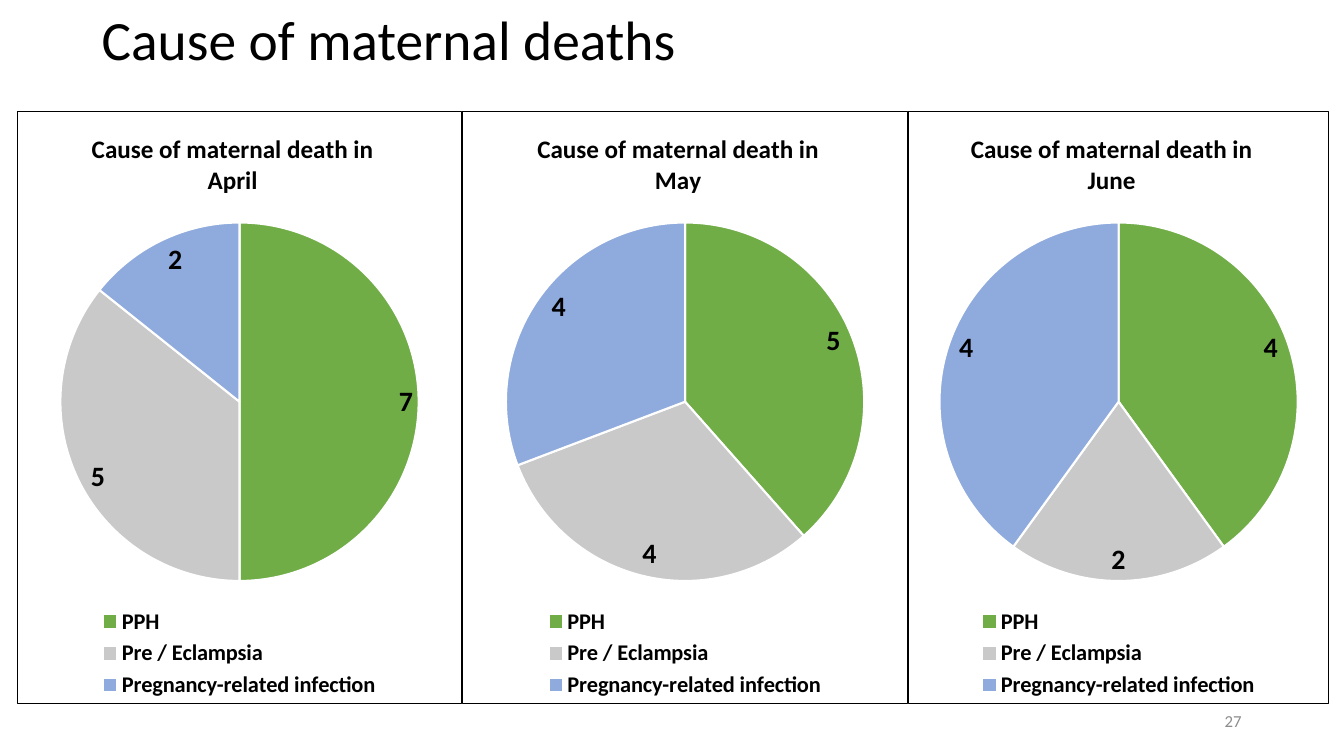
from lxml import etree
from pptx import Presentation, util as u
from pptx.chart.data import CategoryChartData
from pptx.dml.color import RGBColor
from pptx.enum import chart as ch, text
from pptx.oxml import parse_xml
from pptx.oxml.ns import nsdecls, qn

# Content
HEADING = "Cause of maternal deaths"
PAGE_NUMBER = "27"
CAUSES = ("PPH", "Pre / Eclampsia", "Pregnancy-related infection")
MONTHS = [  # month, deaths by cause, panel width
    ("April", (7, 5, 2), 318.25),
    ("May", (5, 4, 4), 318.25),
    ("June", (4, 2, 4), 301),
]

# Theme
THEME = {
    "font": "Calibri",
    "ink": "000000",
    "muted": "8C8C8C",
    "gap": "FFFFFF",
    "causes": ("70AD47", "C9C9C9", "8FAADC"),
    "heading": 39.6, "number": 12, "base": 10,
    "month": 18, "legend": 16, "value": 20,
}

# Geometry
SLIDE_W, SLIDE_H = 960, 540
PANELS_LEFT, PANELS_TOP, PANEL_H = 12, 79.25, 423.5
PIE_SIZE, PIE_TOP = 256.5, 79.5
MONTH_W, MONTH_TOP = 216, 13


def style(font, size, color="ink", bold=False):
    values = {"name": THEME["font"], "size": u.Pt(THEME[size]), "bold": bold}
    for key, value in values.items():
        setattr(font, key, value)
    font.color.rgb = RGBColor.from_string(THEME[color])


def add_line(slide, words, box, size, color="ink", align=text.PP_ALIGN.LEFT):
    frame = slide.shapes.add_textbox(*map(u.Pt, box)).text_frame
    frame.word_wrap = True
    frame.vertical_anchor = text.MSO_ANCHOR.MIDDLE
    line = frame.paragraphs[0]
    line.text, line.alignment = words, align
    style(line.runs[0].font, size, color)
    return line


def place(parent, index, **fractions):
    """Give a chart part a fixed place, as fractions of its panel."""
    for old in parent.findall(qn("c:layout")):
        parent.remove(old)
    layout = etree.Element(qn("c:layout"))
    manual = etree.SubElement(layout, qn("c:manualLayout"))
    settings = {"xMode": "edge", "yMode": "edge"}
    if "w" in fractions:
        settings = {"layoutTarget": "inner", **settings}
    settings.update({key: f"{value:.4f}" for key, value in fractions.items()})
    for key, value in settings.items():
        etree.SubElement(manual, qn(f"c:{key}")).set("val", value)
    parent.insert(index, layout)


def add_panel(slide, month, deaths, left, width):
    data = CategoryChartData()
    data.categories = CAUSES
    data.add_series("Series 1", deaths)
    box = map(u.Pt, (left, PANELS_TOP, width, PANEL_H))
    chart = slide.shapes.add_chart(ch.XL_CHART_TYPE.PIE, *box, data).chart
    style(chart.font, "base", bold=True)

    # Title over two lines
    chart.has_title = True
    title = chart.chart_title
    title.include_in_layout = False
    title.text_frame.text = f"Cause of maternal death in\n{month}"
    for line in title.text_frame.paragraphs:
        style(line.runs[0].font, "month", bold=True)
    place(title._element, 1, x=(width - MONTH_W) / 2 / width, y=MONTH_TOP / PANEL_H)

    # Legend
    chart.has_legend = True
    chart.legend.position = ch.XL_LEGEND_POSITION.BOTTOM
    chart.legend.include_in_layout = False
    style(chart.legend.font, "legend", bold=True)

    # Slices and values
    pie = chart.plots[0]
    pie.vary_by_categories = True
    for index, color in enumerate(THEME["causes"]):
        slice_format = pie.series[0].points[index].format
        slice_format.fill.solid()
        slice_format.fill.fore_color.rgb = RGBColor.from_string(color)
        slice_format.line.color.rgb = RGBColor.from_string(THEME["gap"])
        slice_format.line.width = u.Pt(1.5)
    labels = pie.series[0].data_labels
    labels.show_value = True
    labels.position = ch.XL_LABEL_POSITION.BEST_FIT
    style(labels.font, "value", bold=True)
    plot_area = chart._chartSpace.chart.plotArea
    place(plot_area, 0, x=(width - PIE_SIZE) / 2 / width, y=PIE_TOP / PANEL_H,
          w=PIE_SIZE / width, h=PIE_SIZE / PANEL_H)

    # Panel border
    chart._chartSpace.chart.addnext(parse_xml(
        f'<c:spPr {nsdecls("c", "a")}><a:noFill/><a:ln w="{u.Pt(0.75)}"><a:solidFill>'
        f'<a:srgbClr val="{THEME["ink"]}"/></a:solidFill></a:ln></c:spPr>'))


def main():
    deck = Presentation()
    deck.slide_width, deck.slide_height = u.Pt(SLIDE_W), u.Pt(SLIDE_H)
    slide = deck.slides.add_slide(deck.slide_layouts[6])

    # Heading and page number
    heading = add_line(slide, HEADING, (65.5, 7.2, 843, 46), "heading")
    heading.line_spacing = 0.9
    add_line(slide, PAGE_NUMBER, (678, 500.5, 216, 28.75), "number", "muted",
             text.PP_ALIGN.RIGHT)

    # One panel per month, side by side
    left = PANELS_LEFT
    for month, deaths, width in MONTHS:
        add_panel(slide, month, deaths, left, width)
        left += width

    deck.save("out.pptx")


if __name__ == "__main__":
    main()
